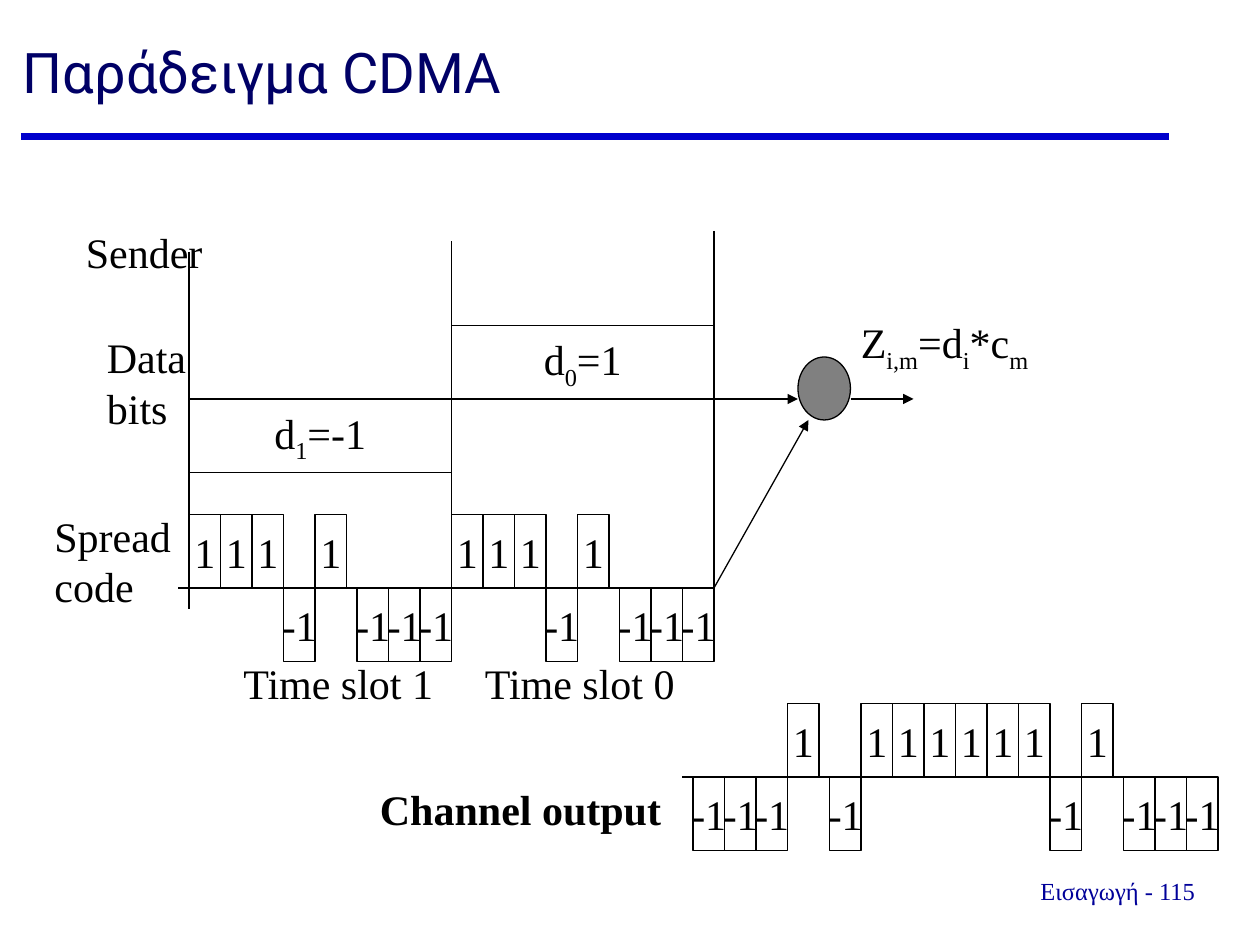
from lxml import etree
from pptx import Presentation
from pptx.dml.color import RGBColor
from pptx.enum.shapes import MSO_CONNECTOR, MSO_SHAPE
from pptx.enum.text import MSO_ANCHOR, MSO_AUTO_SIZE, PP_ALIGN
from pptx.oxml.ns import qn
from pptx.util import Cm, Pt

BLACK = RGBColor(0, 0, 0)
GRAY = RGBColor(0x80, 0x80, 0x80)
TITLE_BLUE = RGBColor(0, 0, 0x66)
RULE_BLUE = RGBColor(0, 0, 0xCC)
FOOTER_BLUE = RGBColor(0, 0, 0x99)
SERIF = "Times New Roman"

# Diagram grid: 120 x 90 units on the page
UNIT = 25.4 / 120
SLOT_LEFTS = (18, 43)
SLOT_WIDTH, CHIP_WIDTH, LEVEL = 25, 3, 7
DATA_AXIS, CODE_AXIS, OUTPUT_AXIS = 38, 56, 74
OUTPUT_LEFT = 66
DATA_BITS = (-1, 1)
SPREAD_CODE = (1, 1, 1, -1, 1, -1, -1, -1)
# Stacking order of the chips in each slot
CHIP_ORDERS = ((0, 1, 4, 3, 2, 7, 6, 5), (4, 3, 2, 1, 0, 7, 6, 5))


def grid(*units):
    return [Cm(unit * UNIT) for unit in units]


def write(para, text, size=24, font=SERIF, color=BLACK, bold=False):
    """Fill a paragraph; every second part between underscores is a subscript."""
    para.font.size, para.font.name, para.font.bold = Pt(size), font, bold
    para.font.color.rgb = color
    for index, part in enumerate(text.split("_")):
        if part:
            span = para.add_run()
            span.text = part
            if index % 2:
                span.font._element.set("baseline", "-25000")


def add_text(page, bounds, *lines, wrap=False, align=PP_ALIGN.LEFT, **style):
    frame = page.shapes.add_textbox(*bounds).text_frame
    frame.word_wrap = wrap
    frame.auto_size = MSO_AUTO_SIZE.NONE if wrap else MSO_AUTO_SIZE.SHAPE_TO_FIT_TEXT
    for index, line in enumerate(lines):
        para = frame.add_paragraph() if index else frame.paragraphs[0]
        para.alignment = align
        write(para, line, **style)


def add_line(page, start, end, color=BLACK, width=0.75, arrow=False):
    line = page.shapes.add_connector(
        MSO_CONNECTOR.STRAIGHT, *grid(*start), *grid(*end))
    line.line.color.rgb, line.line.width = color, Pt(width)
    if arrow:
        etree.SubElement(line.line._get_or_add_ln(), qn("a:tailEnd"), type="triangle")
    etree.SubElement(line._element.spPr, qn("a:effectLst"))


def add_outline(page, kind, *bounds):
    shape = page.shapes.add_shape(kind, *grid(*bounds))
    shape.shadow.inherit = False
    shape.fill.background()
    shape.line.color.rgb, shape.line.width = BLACK, Pt(0.75)
    return shape


def add_pulse(page, left, axis, width, value, label):
    """Box above the axis for a positive value, below it for a negative one."""
    top = axis - LEVEL if value > 0 else axis
    box = add_outline(page, MSO_SHAPE.RECTANGLE, left, top, width, LEVEL)
    frame = box.text_frame
    frame.word_wrap = False
    frame.vertical_anchor = MSO_ANCHOR.MIDDLE
    frame.paragraphs[0].alignment = PP_ALIGN.CENTER
    write(frame.paragraphs[0], label)


def add_chips(page, left, axis, chips, order, gap_after):
    """Eight chips per slot, with one grid unit of gap between two of them."""
    for index in order:
        gap = 1 if index >= gap_after else 0
        add_pulse(page, left + index * CHIP_WIDTH + gap, axis, CHIP_WIDTH,
                  chips[index], str(chips[index]))


def add_signals(page):
    slots = list(zip(SLOT_LEFTS, DATA_BITS, (1, 0), CHIP_ORDERS, (4, 5)))
    for left, bit, number, _, _ in slots:
        add_pulse(page, left, DATA_AXIS, SLOT_WIDTH, bit, f"d_{number}_={bit}")
    for left, _, _, order, _ in slots:
        add_chips(page, left, CODE_AXIS, SPREAD_CODE, order, 5)
    for left, bit, _, order, gap_after in slots:
        output = [bit * chip for chip in SPREAD_CODE]
        output_left = OUTPUT_LEFT + left - SLOT_LEFTS[0]
        add_chips(page, output_left, OUTPUT_AXIS, output, order, gap_after)

    # Slot borders and time axes
    for x, top, bottom in ((18, 24, 58), (43, 23, 59), (68, 22, 58)):
        add_line(page, (x, top), (x, bottom))
    for left, axis in ((17, CODE_AXIS), (65, OUTPUT_AXIS)):
        add_line(page, (left, axis), (left + 51, axis))


def add_multiplier(page):
    node = add_outline(page, MSO_SHAPE.OVAL, 76, 34, 5, 6)
    node.fill.solid()
    node.fill.fore_color.rgb = GRAY
    for start, end in (((68, 38), (76, 38)), ((68, 56), (77, 40)), ((81, 38), (87, 38))):
        add_line(page, start, end, arrow=True)


def add_labels(page):
    add_text(page, grid(7, 21, 13.5, 6), "Sender")
    add_text(page, grid(9, 31, 10, 10.8), "Data", "bits")
    add_text(page, grid(4, 48, 13.5, 10.8), "Spread", "code")
    add_text(page, grid(80.8, 29.6, 19.2, 6), "Z_i,m_=d_i_*c_m_")
    add_text(page, grid(22, 62, 20.6, 6), "Time slot 1")
    add_text(page, grid(45, 62, 20.6, 6), "Time slot 0")
    add_text(page, grid(35, 74, 29.3, 6), "Channel output", bold=True)


def main():
    deck = Presentation()
    deck.slide_width, deck.slide_height = Cm(25.4), Cm(19.05)
    page = deck.slides.add_slide(deck.slide_layouts[6])

    # Title, rule and footer
    add_line(page, (2, 13), (111.3, 13), RULE_BLUE, 4)
    add_text(page, (Cm(0.21), Cm(0.64), Cm(24.56), Cm(2.13)), "Παράδειγμα CDMA",
             wrap=True, size=32, font="Roboto", color=TITLE_BLUE)
    add_text(page, (Cm(20.31), Cm(17.53), Cm(4.45), Cm(0.84)), "Εισαγωγή - 115",
             wrap=True, align=PP_ALIGN.CENTER, size=14, color=FOOTER_BLUE)

    # Spreading diagram
    add_signals(page)
    add_multiplier(page)
    add_labels(page)
    deck.save("out.pptx")


if __name__ == "__main__":
    main()
